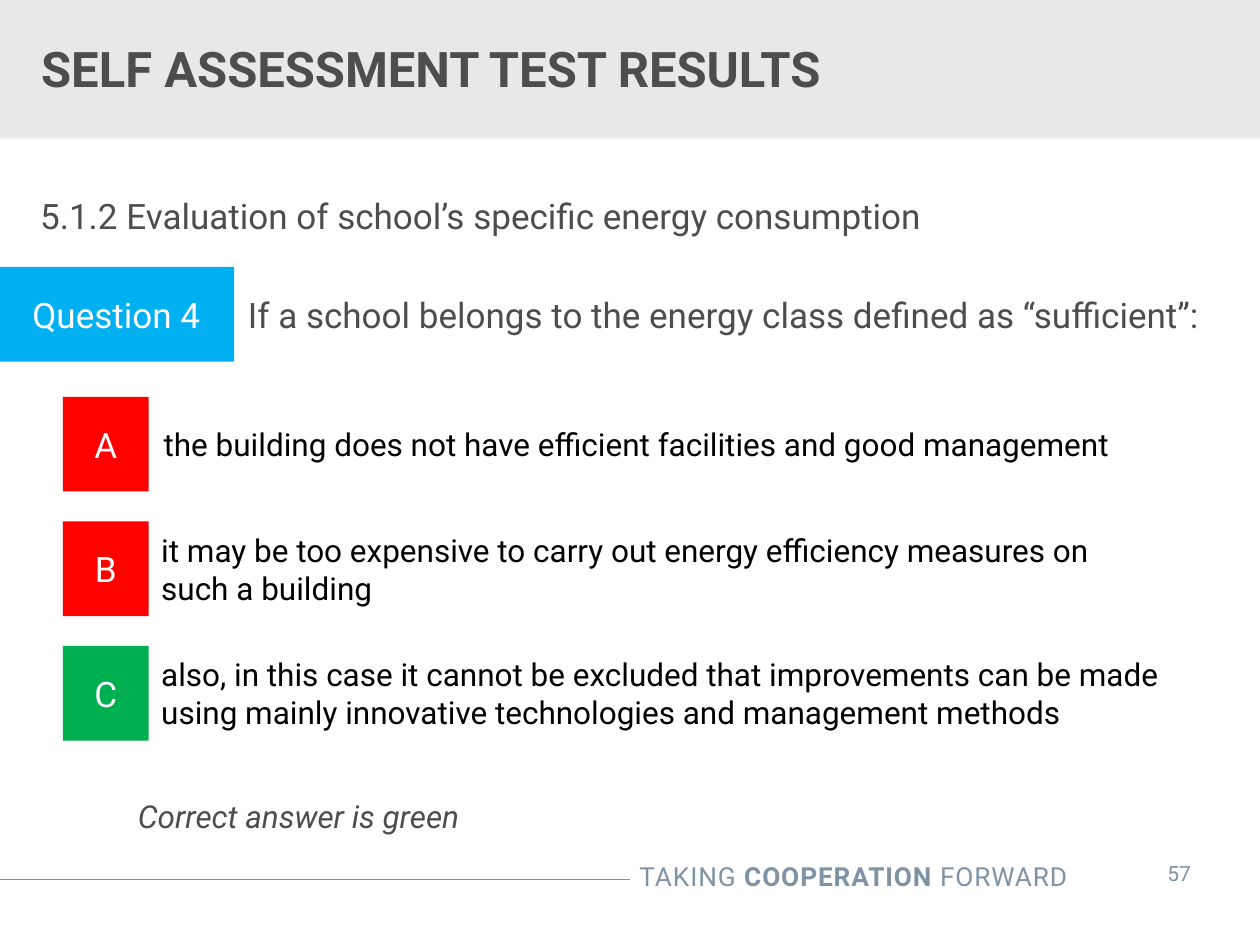
from dataclasses import dataclass

from lxml import etree
from pptx import Presentation
from pptx import util as u
from pptx.dml.color import RGBColor
from pptx.enum import shapes, text
from pptx.oxml.ns import qn

COLOURS = {
    "band": "E8E8E8", "slate": "7E93A5", "grey": "4D4D4E", "white": "FFFFFF",
    "black": "000000", "question": "00B0F0", "wrong": "FF0000", "right": "00B050",
}
LEFT, CENTRE, RIGHT = text.PP_ALIGN.LEFT, text.PP_ALIGN.CENTER, text.PP_ALIGN.RIGHT
ROW_HEIGHT = 1.91


@dataclass
class Box:
    left: float
    top: float
    width: float
    height: float

    def lengths(self) -> list:
        return [u.Cm(v) for v in (self.left, self.top, self.width, self.height)]


@dataclass
class Style:
    size: float
    colour: str
    align: int = LEFT
    bold: bool = False
    italic: bool = False
    spacing: int = 0


@dataclass
class Answer:
    letter: str
    wording: str
    verdict: str
    wording_left: float = 3.0


ANSWERS = [
    Answer("A", "the building does not have efficient facilities and good management", "wrong", 3.05),
    Answer("B", "it may be too expensive to carry out energy efficiency measures on such a building", "wrong"),
    Answer("C", "also, in this case it cannot be excluded that improvements can be made "
                "using mainly innovative technologies and management methods", "right"),
]


def rgb(name: str) -> RGBColor:
    return RGBColor.from_string(COLOURS[name])


def write(shape, runs: list, style: Style, **frame_format) -> None:
    """Fill a shape with one paragraph of (wording, bold) runs."""
    frame = shape.text_frame
    settings = {"word_wrap": True, "auto_size": text.MSO_AUTO_SIZE.NONE,
                "vertical_anchor": text.MSO_ANCHOR.MIDDLE} | frame_format
    for attribute, value in settings.items():
        setattr(frame, attribute, value)
    paragraph = frame.paragraphs[0]
    paragraph.alignment = style.align
    for wording, bold in runs:
        run = paragraph.add_run()
        run.text = wording
        font_format = {"name": "Roboto", "size": u.Pt(style.size), "bold": bold, "italic": style.italic}
        for attribute, value in font_format.items():
            setattr(run.font, attribute, value)
        run.font.color.rgb = rgb(style.colour)
        if style.spacing:
            run.font._element.set("spc", str(style.spacing))


def add_label(slide, box: Box, wording: str, style: Style, **frame_format) -> None:
    """Add a text box with a single run."""
    write(slide.shapes.add_textbox(*box.lengths()), [(wording, style.bold)], style, **frame_format)


def add_block(slide, box: Box, fill: str):
    """Add a plain filled rectangle."""
    block = slide.shapes.add_shape(shapes.MSO_SHAPE.RECTANGLE, *box.lengths())
    block.shadow.inherit = False
    block.fill.solid()
    block.fill.fore_color.rgb = rgb(fill)
    block.line.fill.background()
    return block


def add_tag(slide, box: Box, wording: str, fill: str) -> None:
    """Add a coloured block with a centred white caption."""
    write(add_block(slide, box, fill), [(wording, False)], Style(20, "white", CENTRE))


def add_header(slide) -> None:
    """Put the title on its grey band."""
    band = add_block(slide, Box(0, 0, 25.4, 2.79), "band")
    title = slide.shapes.title
    title.element.addprevious(band.element)
    title.left, title.top, title.width, title.height = Box(-0.03, 0.41, 18.31, 1.9).lengths()
    write(title, [("SELF ASSESSMENT TEST RESULTS", True)], Style(28, "grey"), margin_left=u.Cm(0.86))


def add_footer(slide) -> None:
    """Draw the rule, the motto and the page number."""
    rule = slide.shapes.add_connector(
        shapes.MSO_CONNECTOR.STRAIGHT, u.Cm(-0.03), u.Cm(17.73), u.Cm(12.7), u.Cm(17.73))
    rule.line.color.rgb = rgb("slate")
    rule.line.width = u.Pt(0.75)
    etree.SubElement(rule._element.spPr, qn("a:effectLst"))
    motto = slide.shapes.add_textbox(*Box(9.86, 17.22, 11.91, 0.89).lengths())
    write(motto, [("TAKING ", False), ("COOPERATION", True), (" FORWARD", False)],
          Style(15, "slate", RIGHT, spacing=50))
    add_label(slide, Box(22.83, 17.09, 1.88, 1.02), "57", Style(12, "slate", CENTRE), word_wrap=False)


def add_quiz(slide) -> None:
    """Lay out the topic, the question, its answers and the key."""
    flush = {"margin_left": 0, "margin_right": 0, "margin_top": 0, "margin_bottom": 0}
    add_label(slide, Box(0.81, 3.91, 23.77, 0.86),
              "5.1.2 Evaluation of school’s specific energy consumption", Style(20, "grey"), **flush)
    add_tag(slide, Box(-0.03, 5.38, 4.75, ROW_HEIGHT), "Question 4", "question")
    add_label(slide, Box(4.75, 5.38, 20.7, ROW_HEIGHT),
              "If a school belongs to the energy class defined as “sufficient”:", Style(20, "grey"))
    for index, answer in enumerate(ANSWERS):
        top = 8 + 2.51 * index
        add_tag(slide, Box(1.27, top, 1.73, ROW_HEIGHT), answer.letter, answer.verdict)
        add_label(slide, Box(answer.wording_left, top, 20.7, ROW_HEIGHT), answer.wording, Style(18, "black"))
    add_label(slide, Box(2.78, 16.05, 10, 0.8), "Correct answer is green",
              Style(18, "grey", italic=True), **flush)


def main() -> None:
    deck = Presentation()
    deck.slide_width, deck.slide_height = u.Cm(25.4), u.Cm(19.05)
    slide = deck.slides.add_slide(deck.slide_layouts.get_by_name("Title Only"))
    add_header(slide)
    add_footer(slide)
    add_quiz(slide)
    deck.save("out.pptx")


if __name__ == "__main__":
    main()
